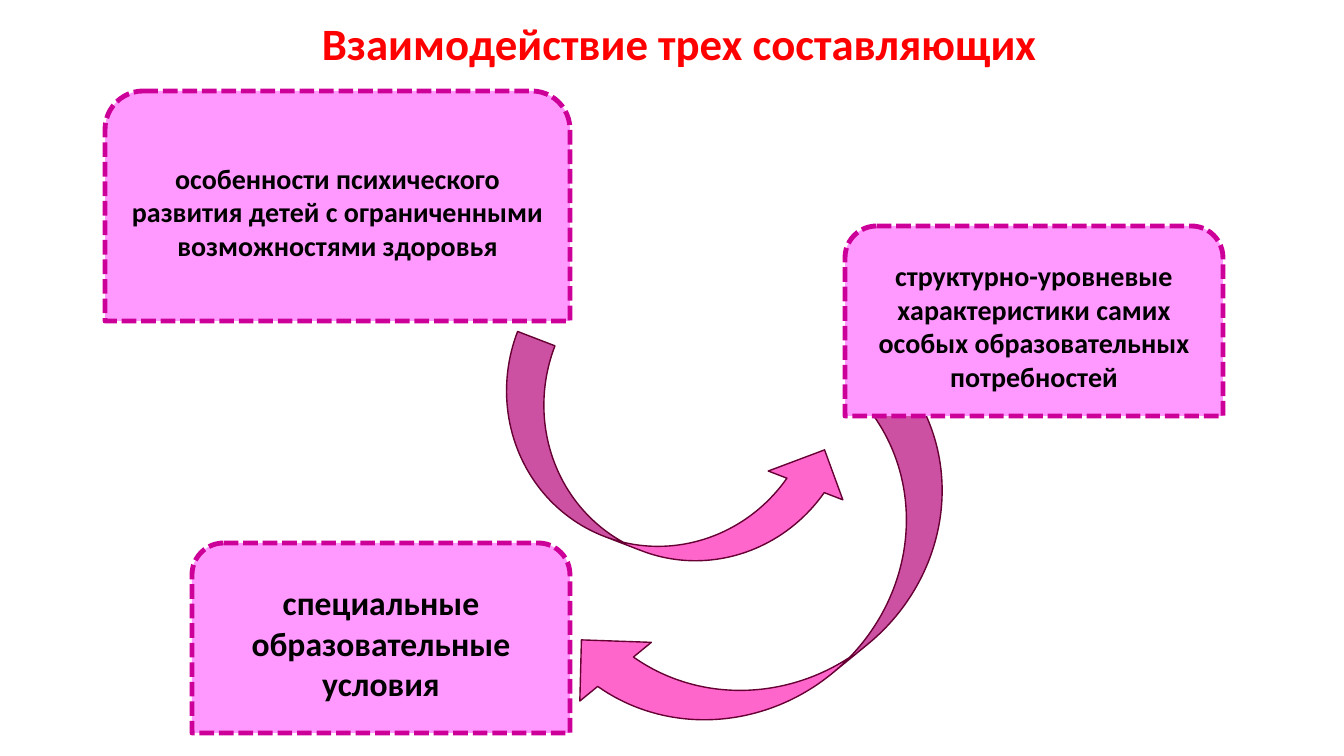
from pptx import Presentation
from pptx.dml.color import RGBColor
from pptx.enum.dml import MSO_LINE
from pptx.enum.shapes import MSO_SHAPE
from pptx.enum.text import MSO_ANCHOR, PP_ALIGN
from pptx.util import Emu, Pt

LEFT_ARROW = MSO_SHAPE.CURVED_LEFT_ARROW
RIGHT_ARROW = MSO_SHAPE.CURVED_RIGHT_ARROW
CARD = MSO_SHAPE.ROUND_2_SAME_RECTANGLE
DASH = MSO_LINE.SQUARE_DOT
MIDDLE, TOP = MSO_ANCHOR.MIDDLE, MSO_ANCHOR.TOP
CENTER = PP_ALIGN.CENTER

RED = RGBColor(0xFF, 0x00, 0x00)
BLACK = RGBColor(0x00, 0x00, 0x00)
PINK = RGBColor(0xFF, 0x99, 0xFF)
MAGENTA = RGBColor(0xCC, 0x00, 0x99)
ROSE = RGBColor(0xFF, 0x66, 0xCC)
PLUM = RGBColor(0x66, 0x00, 0x33)

TITLE = "Взаимодействие трех составляющих"
TITLE_BOX = (176, 11, 1007, 65)
ARROWS = [
    (LEFT_ARROW, (690, 364, 185, 461), 50.6),
    (RIGHT_ARROW, (581, 288, 160, 369), 291.1),
]
CARDS = [
    ("особенности психического развития детей с ограниченными возможностями здоровья",
     (105, 91, 465, 230), 20),
    ("структурно-уровневые характеристики самих особых образовательных потребностей",
     (845, 226, 378, 190), 20),
    ("специальные образовательные условия", (192, 543, 378, 190), 24),
]

PX = 914400 / 100.8


def px(*lengths):
    return [Emu(round(n * PX)) for n in lengths]


def write(shape, text, size, color=BLACK, anchor=MIDDLE):
    tf = shape.text_frame
    tf.word_wrap = True
    tf.vertical_anchor = anchor
    p = tf.paragraphs[0]
    p.alignment = CENTER
    r = p.add_run()
    r.text = text
    r.font.name = "Calibri"
    r.font.size = Pt(size)
    r.font.bold = True
    r.font.color.rgb = color


def add_figure(kind, box, fill, line, width):
    sp = s.shapes.add_shape(kind, *px(*box))
    sp.shadow.inherit = False
    sp.fill.solid()
    sp.fill.fore_color.rgb = fill
    sp.line.color.rgb = line
    sp.line.width = Pt(width)
    return sp


prs = Presentation()
prs.slide_width, prs.slide_height = px(1344, 756)
s = prs.slides.add_slide(prs.slide_layouts[6])

for kind, box, angle in ARROWS:
    add_figure(kind, box, ROSE, PLUM, 1).rotation = angle

write(s.shapes.add_textbox(*px(*TITLE_BOX)), TITLE, 32, color=RED, anchor=TOP)

for text, box, size in CARDS:
    sp = add_figure(CARD, box, PINK, MAGENTA, 3.5)
    sp.line.dash_style = DASH
    write(sp, text, size)

prs.save("out.pptx")
